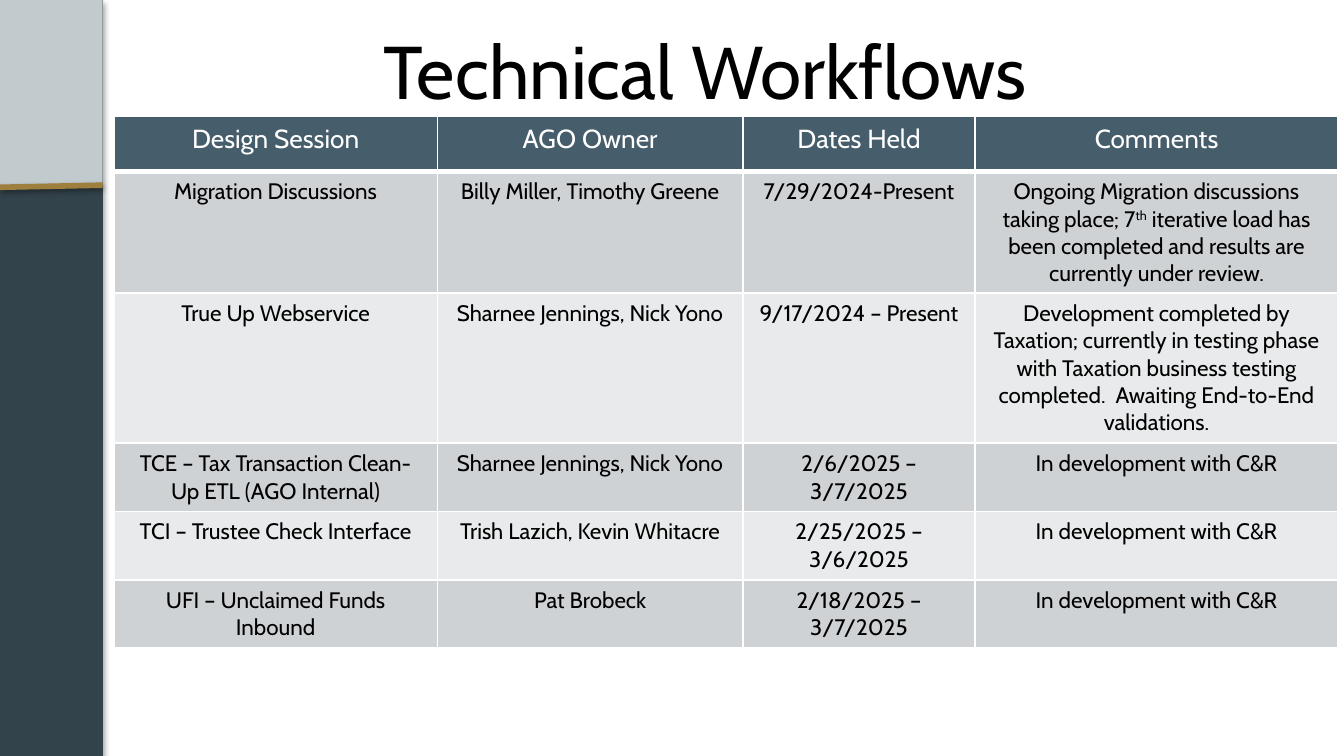
from dataclasses import dataclass

import lxml.etree
import pptx
import pptx.dml.color
import pptx.enum.shapes
import pptx.enum.text
import pptx.oxml
import pptx.oxml.ns
import pptx.util

Cm = pptx.util.Cm
Pt = pptx.util.Pt
RGB = pptx.dml.color.RGBColor.from_string
CENTER = pptx.enum.text.PP_ALIGN.CENTER
MIDDLE = pptx.enum.text.MSO_ANCHOR.MIDDLE
RECT = pptx.enum.shapes.MSO_SHAPE.RECTANGLE
STRAIGHT = pptx.enum.shapes.MSO_CONNECTOR.STRAIGHT
NS = pptx.oxml.ns.nsdecls("a")


@dataclass
class Theme:
    font: str = "Cabin"
    black: str = "000000"
    white: str = "FFFFFF"
    sidebar: str = "33434B"
    panel: str = "C1CACC"
    gold: str = "9E7F3D"
    header: str = "465D6B"
    bands: tuple = ("CFD2D4", "E9EAEB")
    title_size: int = 40
    header_size: int = 14
    body_size: int = 12


def add_run(p, text, size, color):
    r = p.add_run()
    r.text = text
    r.font.name = theme.font
    r.font.size = Pt(size)
    r.font.color.rgb = RGB(color)
    return r


def add_shadow(sp, alpha, distance):
    sp._element.spPr.append(pptx.oxml.parse_xml(
        f'<a:effectLst {NS}><a:outerShdw blurRad="{Pt(3.1)}" dist="{Pt(distance)}" '
        f'dir="5400000" rotWithShape="0"><a:srgbClr val="{theme.black}">'
        f'<a:alpha val="{alpha * 1000}"/></a:srgbClr></a:outerShdw></a:effectLst>'))


theme = Theme()
prs = pptx.Presentation()
prs.slide_width = Cm(25.4)
prs.slide_height = Cm(14.29)
s = prs.slides.add_slide(prs.slide_layouts[6])

bar_width = Cm(1.94)
sidebar = s.shapes.add_shape(RECT, 0, 0, bar_width, prs.slide_height)
sidebar.fill.solid()
sidebar.fill.fore_color.rgb = RGB(theme.sidebar)
sidebar.line.color.rgb = RGB(theme.sidebar)
sidebar.line.width = Pt(0.75)
add_shadow(sidebar, 35, 1.8)

panel = s.shapes.add_shape(RECT, 0, 0, bar_width, Cm(3.5))
panel.shadow.inherit = False
panel.fill.solid()
panel.fill.fore_color.rgb = RGB(theme.panel)
panel.line.fill.background()

rule = s.shapes.add_connector(STRAIGHT, 0, Cm(3.54), bar_width, Cm(3.5))
rule.line.color.rgb = RGB(theme.gold)
rule.line.width = Pt(3)
add_shadow(rule, 38, 1.6)

title = s.shapes.add_textbox(Cm(2.51), Cm(0.13), Cm(21.62), Cm(2.39))
tf = title.text_frame
tf.word_wrap = True
tf.vertical_anchor = MIDDLE
p = tf.paragraphs[0]
p.alignment = CENTER
add_run(p, "Technical Workflows", theme.title_size, theme.black)

rows = [
    ["Design Session", "AGO Owner", "Dates Held", "Comments"],
    ["Migration Discussions", "Billy Miller, Timothy Greene", "7/29/2024-Present",
     "Ongoing Migration discussions taking place; 7^th^ iterative load has been "
     "completed and results are currently under review."],
    ["True Up Webservice", "Sharnee Jennings, Nick Yono", "9/17/2024 – Present",
     "Development completed by Taxation; currently in testing phase with Taxation "
     "business testing completed.  Awaiting End-to-End validations."],
    ["TCE – Tax Transaction Clean-Up ETL (AGO Internal)", "Sharnee Jennings, Nick Yono",
     "2/6/2025 – 3/7/2025", "In development with C&R"],
    ["TCI – Trustee Check Interface", "Trish Lazich, Kevin Whitacre",
     "2/25/2025 – 3/6/2025", "In development with C&R"],
    ["UFI – Unclaimed Funds Inbound", "Pat Brobeck",
     "2/18/2025 – 3/7/2025", "In development with C&R"],
]
col_widths = [6.12, 5.77, 4.39, 6.86]
row_heights = [1.04, 2.3, 2.84, 1.29, 1.29, 1.29]

table = s.shapes.add_table(len(rows), len(col_widths), Cm(2.15), Cm(2.2),
                           Cm(sum(col_widths)), Cm(sum(row_heights))).table
for col, width in zip(table.columns, col_widths):
    col.width = Cm(width)
for row, height in zip(table.rows, row_heights):
    row.height = Cm(height)

for i, texts in enumerate(rows):
    is_header = i == 0
    fill = theme.header if is_header else theme.bands[(i - 1) % 2]
    size = theme.header_size if is_header else theme.body_size
    color = theme.white if is_header else theme.black
    for j, text in enumerate(texts):
        cell = table.cell(i, j)
        tcPr = cell._tc.get_or_add_tcPr()
        for side in "LRTB":
            thick = (is_header and side == "B") or (i == 1 and side == "T")
            tcPr.append(pptx.oxml.parse_xml(
                f'<a:ln{side} {NS} w="{Pt(3 if thick else 1)}"><a:solidFill>'
                f'<a:srgbClr val="{theme.white}"/></a:solidFill></a:ln{side}>'))
        cell.fill.solid()
        cell.fill.fore_color.rgb = RGB(fill)
        p = cell.text_frame.paragraphs[0]
        p.alignment = CENTER
        for k, part in enumerate(text.split("^")):
            r = add_run(p, part, size, color)
            if k % 2:
                r.font._element.set("baseline", "30000")

prs.save("out.pptx")
